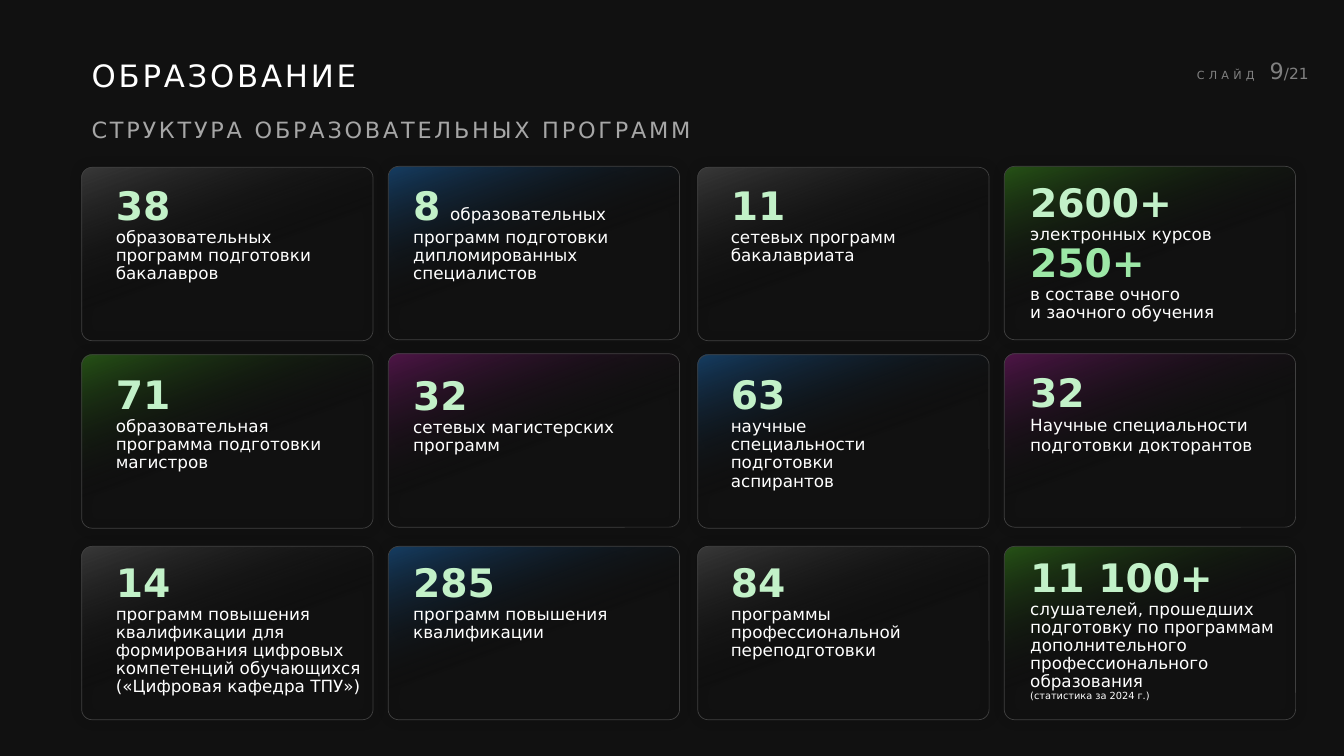
from lxml.etree import SubElement
from pptx import Presentation
from pptx.dml.color import RGBColor
from pptx.enum.shapes import MSO_SHAPE
from pptx.enum.text import MSO_ANCHOR, MSO_AUTO_SIZE, PP_ALIGN
from pptx.oxml.ns import qn
from pptx.util import Inches, Pt

FONT = "DejaVu Sans"
COLORS = {
    "background": "111111", "white": "FFFFFF", "subtitle": "A6A6A6",
    "counter": "808080", "border": "404040", "shadow": "000000",
    "number": "C2F1C8", "number_deep": "9DE8A7",
    "gray": "3A3A3A", "blue": "163E64", "green": "275417", "purple": "501649",
}
# Style: size, colour, bold, letter spacing in points
STYLES = {
    "title": (22, "white", False, 2),
    "subtitle": (16, "subtitle", False, 2),
    "number": (28, "number", True, 0),
    "number_deep": (28, "number_deep", True, 0),
    "gap": (20, "white", True, 0),
    "label": (12, "white", False, 0),
    "note": (7, "white", False, 0),
    "counter_word": (8, "counter", False, 3),
    "counter_gap": (12, "counter", False, 0),
    "counter_now": (16, "counter", False, 0),
    "counter_total": (11, "counter", False, 0),
}

CARD_WIDTH, CARD_HEIGHT = 2.89, 1.72
# Column: card left, text offset, text width, rise of the upper two cards
COLUMNS = [(0.81, 0.24, 2.65, 0), (3.85, 0.15, 2.45, 0.01),
           (6.92, 0.23, 2.26, 0), (9.96, 0.16, 2.64, 0.01)]
ROW_TOPS = [1.66, 3.52, 5.42]


def stat(number, *labels):
    return [[("number", number)]] + [[("label", label)] for label in labels]


# Card: accent colour, top of its text, line spacing, paragraphs of runs
CARDS = [
    [
        ("gray", 1.8, 0.9, stat("38", "образовательных программ подготовки бакалавров")),
        ("blue", 1.8, 0.9, [[
            ("number", "8"), ("gap", " "),
            ("label", "образовательных программ подготовки дипломированных специалистов")]]),
        ("gray", 1.8, 0.9, stat("11", "сетевых программ бакалавриата")),
        ("green", 1.77, 0.9, stat("2600+", "электронных курсов")
         + [[("number_deep", "250+")], [("label", "в составе очного")],
            [("label", "и заочного обучения")]]),
    ],
    [
        ("green", 3.68, 0.9, stat("71", "образовательная программа подготовки магистров")),
        ("purple", 3.69, 0.9, stat("32", "сетевых магистерских программ")),
        ("blue", 3.68, 0.9, stat("63", "научные специальности подготовки аспирантов")),
        ("purple", 3.6, 1.0, stat("32", "Научные специальности подготовки докторантов")),
    ],
    [
        ("gray", 5.54, 0.9, stat(
            "14", "программ повышения квалификации для формирования цифровых "
            "компетенций обучающихся", "(«Цифровая кафедра ТПУ»)")),
        ("blue", 5.54, 0.9, stat("285", "программ повышения квалификации")),
        ("gray", 5.54, 0.9, stat("84", "программы профессиональной переподготовки")),
        ("green", 5.49, 0.9, stat(
            "11 100+", "слушателей, прошедших подготовку по программам "
            "дополнительного профессионального образования")
         + [[("note", "(статистика за 2024 г.)")]]),
    ],
]


def rgb(name):
    return RGBColor.from_string(COLORS[name])


def place(shape, left, top, width, height):
    box = {"left": left, "top": top, "width": width, "height": height}
    for side, inches in box.items():
        setattr(shape, side, Inches(inches))


def write(shape, paragraphs, spacing=1.0, align=PP_ALIGN.LEFT, anchor=MSO_ANCHOR.TOP):
    frame = shape.text_frame
    settings = {"word_wrap": True, "auto_size": MSO_AUTO_SIZE.NONE, "vertical_anchor": anchor}
    for attribute, value in settings.items():
        setattr(frame, attribute, value)
    for index, runs in enumerate(paragraphs):
        paragraph = frame.add_paragraph() if index else frame.paragraphs[0]
        paragraph.alignment = align
        paragraph.line_spacing = spacing
        for style, text in runs:
            size, color, bold, tracking = STYLES[style]
            run = paragraph.add_run()
            run.text = text
            for attribute, value in {"name": FONT, "size": Pt(size), "bold": bold}.items():
                setattr(run.font, attribute, value)
            run.font.color.rgb = rgb(color)
            if tracking:
                run.font._element.set("spc", str(tracking * 100))


def add_text(slide, box, paragraphs, **layout):
    shape = slide.shapes.add_textbox(*map(Inches, box))
    write(shape, paragraphs, **layout)


def add_heading(slide, left, top, width):
    title = slide.shapes.title
    place(title, left, top, width, 0.47)
    write(title, [[("title", "ОБРАЗОВАНИЕ")]])
    add_text(slide, (left, top + 0.59, width, 0.37),
             [[("subtitle", "СТРУКТУРА ОБРАЗОВАТЕЛЬНЫХ ПРОГРАММ")]])


def add_counter(slide, box):
    add_text(slide, box, [[("counter_word", "СЛАЙД"), ("counter_gap", "  "),
                           ("counter_now", "9"), ("counter_total", "/21")]],
             align=PP_ALIGN.RIGHT, anchor=MSO_ANCHOR.MIDDLE)


def add_alpha(color, percent):
    SubElement(color, qn("a:alpha")).set("val", str(percent * 1000))


def add_panel(slide, box, accent):
    """Draw a rounded card whose accent colour fades out from the top left."""
    panel = slide.shapes.add_shape(MSO_SHAPE.ROUNDED_RECTANGLE, *map(Inches, box))
    panel.adjustments[0] = 0.06
    panel.fill.gradient()
    panel.fill.gradient_angle = 290
    stops = panel.fill.gradient_stops
    for stop, color, position in zip(stops, (accent, "background"), (0, 0.51)):
        stop.color.rgb = rgb(color)
        stop.position = position
    properties = panel._element.spPr
    add_alpha(properties.findall(".//" + qn("a:srgbClr"))[-1], 0)
    panel.line.color.rgb = rgb("border")
    panel.line.width = Pt(0.5)
    panel.shadow.inherit = False
    shadow = SubElement(properties.find(qn("a:effectLst")), qn("a:outerShdw"),
                        blurRad=str(Pt(9)), dist="0", dir="0")
    add_alpha(SubElement(shadow, qn("a:srgbClr"), val=COLORS["shadow"]), 19)


def add_cards(slide):
    for row, (row_top, cards) in enumerate(zip(ROW_TOPS, CARDS)):
        for column, card in zip(COLUMNS, cards):
            left, offset, text_width, rise = column
            accent, text_top, spacing, paragraphs = card
            top = row_top - (rise if row < 2 else 0)
            add_panel(slide, (left, top, CARD_WIDTH, CARD_HEIGHT), accent)
            add_text(slide, (left + offset, text_top, text_width, 1.4),
                     paragraphs, spacing=spacing)


def main():
    presentation = Presentation()
    presentation.slide_width = Inches(13.33)
    presentation.slide_height = Inches(7.5)
    slide = presentation.slides.add_slide(presentation.slide_layouts[5])
    slide.background.fill.solid()
    slide.background.fill.fore_color.rgb = rgb("background")
    add_heading(slide, 0.81, 0.51, 6.93)
    add_cards(slide)
    add_counter(slide, (11.45, 0.55, 1.63, 0.29))
    presentation.save("out.pptx")


if __name__ == "__main__":
    main()
